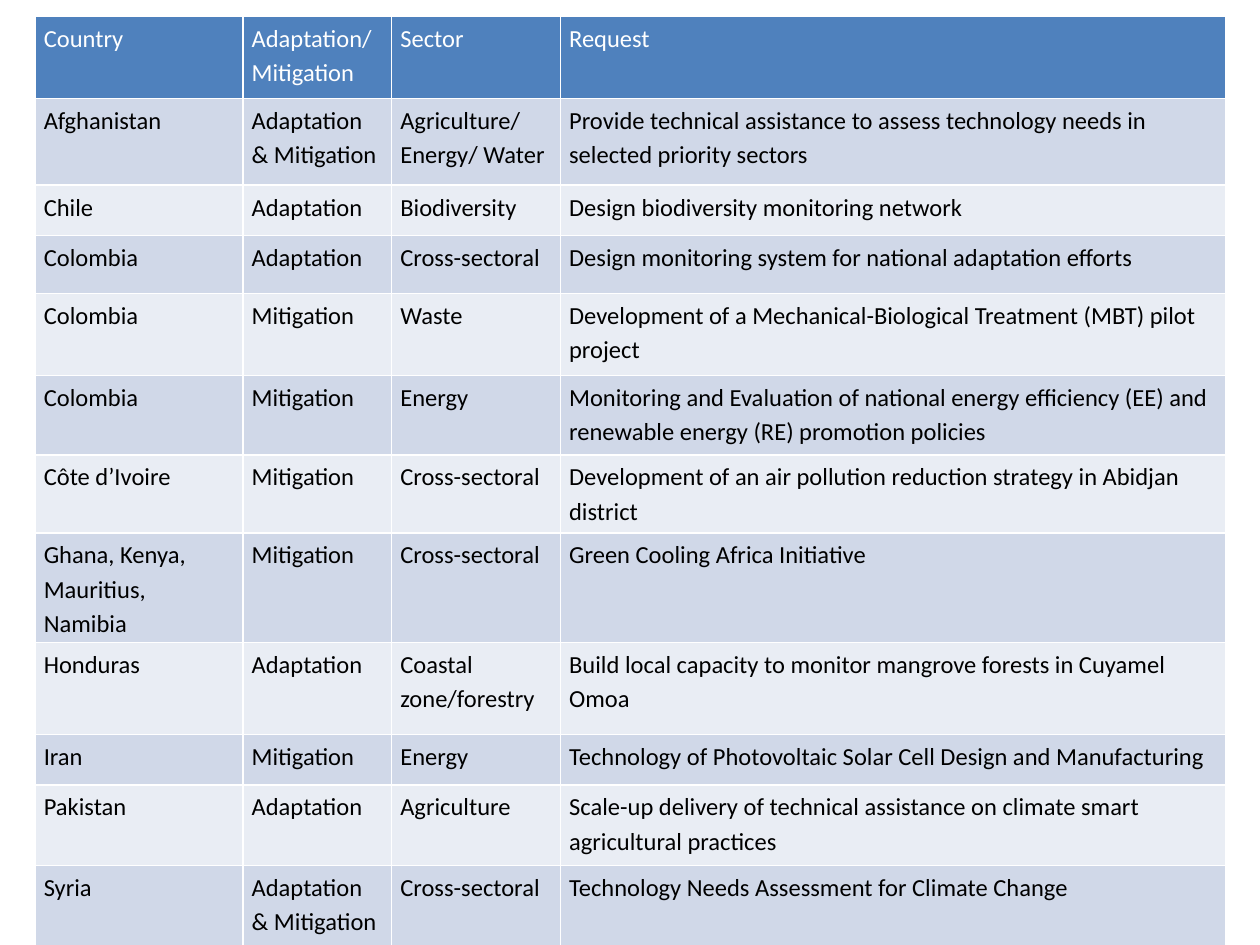
from dataclasses import dataclass
from typing import NamedTuple

from lxml import etree
from pptx import Presentation
from pptx import util as u
from pptx.dml.color import RGBColor
from pptx.enum import text
from pptx.oxml import ns


@dataclass(frozen=True)
class Theme:
    font: str = "Calibri"
    size: float = 14
    lead: float = 1.15
    head: str = "4F81BD"
    bands: tuple[str, str] = ("D0D8E8", "E9EDF4")
    light: str = "FFFFFF"
    dark: str = "000000"
    rule: float = 1
    side: float = 5
    top: float = 1.9


class Row(NamedTuple):
    high: float
    land: str
    kind: str
    sector: str
    ask: str


THEME = Theme()
LEFT, TOP = 20, 9.36
WIDTHS = (118.8, 84.96, 96.48, 380.16)
ADAPT, CUT, CROSS = "Adaptation", "Mitigation", "Cross-sectoral"
BOTH = f"{ADAPT} & {CUT}"
ROWS = (
    Row(46.8, "Country", "Adaptation/\nMitigation", "Sector", "Request"),
    Row(49.68, "Afghanistan", BOTH, "Agriculture/\nEnergy/ Water",
        "Provide technical assistance to assess technology needs in selected priority sectors"),
    Row(28.8, "Chile", ADAPT, "Biodiversity", "Design biodiversity monitoring network"),
    Row(33.12, "Colombia", ADAPT, CROSS,
        "Design monitoring system for national adaptation efforts"),
    Row(46.8, "Colombia", CUT, "Waste",
        "Development of a Mechanical-Biological Treatment (MBT) pilot project"),
    Row(45.36, "Colombia", CUT, "Energy",
        "Monitoring and Evaluation of national energy efficiency (EE) and "
        "renewable energy (RE) promotion policies"),
    Row(44.64, "Côte d’Ivoire", CUT, CROSS,
        "Development of an air pollution reduction strategy in Abidjan district"),
    Row(43.2, "Ghana, Kenya, Mauritius, Namibia", CUT, CROSS,
        "Green Cooling Africa Initiative"),
    Row(52.56, "Honduras", ADAPT, "Coastal zone/forestry",
        "Build local capacity to monitor mangrove forests in Cuyamel Omoa"),
    Row(28.8, "Iran", CUT, "Energy",
        "Technology of Photovoltaic Solar Cell Design and Manufacturing"),
    Row(46.08, "Pakistan", ADAPT, "Agriculture",
        "Scale-up delivery of technical assistance on climate smart agricultural practices"),
    Row(63.36, "Syria", BOTH, CROSS, "Technology Needs Assessment for Climate Change"),
)


def edge(cell, theme: Theme) -> None:
    props = cell._tc.get_or_add_tcPr()
    for spot, side in enumerate("LRTB"):
        line = etree.Element(ns.qn(f"a:ln{side}"), w=str(u.Pt(theme.rule)))
        fill = etree.SubElement(line, ns.qn("a:solidFill"))
        etree.SubElement(fill, ns.qn("a:srgbClr"), val=theme.light)
        props.insert(spot, line)


def write(cell, words: str, ink: str, theme: Theme) -> None:
    frame = cell.text_frame
    for spot, part in enumerate(words.split("\n")):
        para = frame.add_paragraph() if spot else frame.paragraphs[0]
        para.alignment = text.PP_ALIGN.LEFT
        para.line_spacing = theme.lead
        run = para.add_run()
        run.text = part
        run.font.name = theme.font
        run.font.size = u.Pt(theme.size)
        run.font.bold = False
        run.font.color.rgb = RGBColor.from_string(ink)


def paint(cell, words: str, fill: str, ink: str, theme: Theme) -> None:
    cell.margin_left = cell.margin_right = u.Pt(theme.side)
    cell.margin_top = cell.margin_bottom = u.Pt(theme.top)
    cell.vertical_anchor = text.MSO_ANCHOR.TOP
    cell.fill.solid()
    cell.fill.fore_color.rgb = RGBColor.from_string(fill)
    edge(cell, theme)
    write(cell, words, ink, theme)


def draw(slide, rows: tuple[Row, ...], theme: Theme) -> None:
    high = sum(row.high for row in rows)
    grid = slide.shapes.add_table(
        len(rows), len(WIDTHS), u.Pt(LEFT), u.Pt(TOP), u.Pt(sum(WIDTHS)), u.Pt(high)
    ).table
    for col, wide in zip(grid.columns, WIDTHS):
        col.width = u.Pt(wide)
    for spot, row in enumerate(rows):
        grid.rows[spot].height = u.Pt(row.high)
        fill = theme.bands[(spot - 1) % 2] if spot else theme.head
        ink = theme.dark if spot else theme.light
        for cell, words in zip(grid.rows[spot].cells, row[1:]):
            paint(cell, words, fill, ink, theme)


def main() -> None:
    deck = Presentation()
    deck.slide_width, deck.slide_height = u.Pt(720), u.Pt(540)
    slide = deck.slides.add_slide(deck.slide_layouts[6])
    draw(slide, ROWS, THEME)
    deck.save("out.pptx")


if __name__ == "__main__":
    main()
